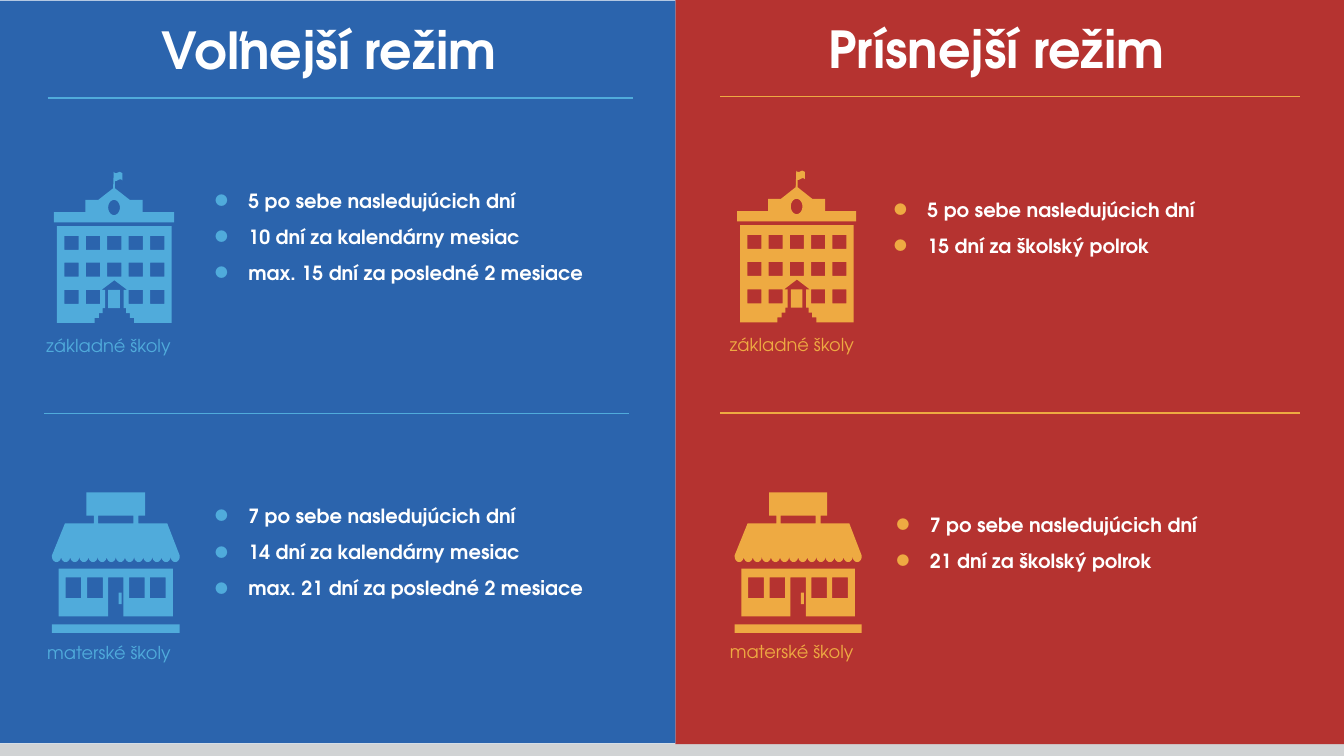
import math

from lxml import etree
from pptx import Presentation
from pptx.dml.color import RGBColor
from pptx.enum.shapes import MSO_CONNECTOR, MSO_SHAPE
from pptx.enum.text import MSO_ANCHOR, MSO_AUTO_SIZE, PP_ALIGN
from pptx.oxml.ns import qn
from pptx.util import Cm, Pt

STRAIGHT = MSO_CONNECTOR.STRAIGHT
RECTANGLE = MSO_SHAPE.RECTANGLE
TOP = MSO_ANCHOR.TOP
FIT_SHAPE = MSO_AUTO_SIZE.SHAPE_TO_FIT_TEXT
LEFT = PP_ALIGN.LEFT

FONT = "TeX Gyre Adventor"
COLORS = {
    "grey": "D1D3D4",
    "red": "B53330",
    "amber": "EEAA42",
    "blue": "2B64AD",
    "sky": "50ABDB",
    "white": "FFFFFF",
}
ICON_PRECISION = 10
ICON_SCALE = Cm(0.0254) / ICON_PRECISION


def box(left, top, width, height):
    right, bottom = left + width, top + height
    return [(left, top), (left, bottom), (right, bottom), (right, top)]


def mirrored(points, axis):
    return points + [(2 * axis - x, y) for x, y in reversed(points)]


def arc(center_x, center_y, radius_x, radius_y, start, end, steps):
    angles = [math.radians(start + (end - start) * step / steps) for step in range(steps + 1)]
    return [(center_x + radius_x * math.cos(a), center_y + radius_y * math.sin(a)) for a in angles]


def curve(start, first, second, end, steps=8):
    points = []
    for step in range(steps + 1):
        t = step / steps
        weights = ((1 - t) ** 3, 3 * t * (1 - t) ** 2, 3 * t**2 * (1 - t), t**3)
        controls = (start, first, second, end)
        points.append(tuple(sum(w * c[axis] for w, c in zip(weights, controls)) for axis in (0, 1)))
    return points


def school_contours():
    flag_bottom = curve((99, 15), (103, 16), (107, 9), (111, 14))
    flag_top = curve((107, 0), (104, 0), (100, 5), (97, 0))
    roof = mirrored([(96, 27), (72, 46), (51, 46), (51, 66), (0, 66), (0, 83)], 97.5)
    body = [(5, 89), (5, 248), (66, 248), (66, 240), (73, 240), (73, 232), (79, 232),
            (79, 224), (83, 224), (83, 194), (77, 194), (98, 178)]
    windows = [
        box(17 + 34.75 * column, top, 23, 23)
        for top in (105, 149, 194)
        for column in range(5)
        if (top, column) != (194, 2)
    ]
    return [
        flag_top + roof + flag_bottom + [(111, 2)],
        arc(97.5, 58.5, 9.5, 12.5, 0, 360, 32),
        mirrored(body, 98),
        box(88, 194, 19, 30),
    ] + windows


def kindergarten_contours():
    scallop = 14.8
    awning = [(56, 0), (56, 38), (68, 38), (68, 51), (21, 51), (0, 103)]
    for number in range(14):
        awning += arc((number + 0.5) * scallop, 105, scallop / 2, 9, 180, 0, 10)
    awning += [(207, 103), (187, 51), (140, 51), (140, 38), (151, 38), (151, 0)]
    wall = mirrored([(11, 125), (11, 203), (91, 203), (91, 139)], 103.5)
    windows = [box(left, 139, 25.5, 34) for left in (22, 57, 125, 159)]
    return [awning, box(75, 38, 57, 13), wall, box(108, 164, 5, 19), box(0, 216, 207, 14)] + windows


class RegimeSlide:
    def __init__(self, presentation):
        self.slide = presentation.slides.add_slide(presentation.slide_layouts[5])
        self.shapes = self.slide.shapes

    def color(self, name):
        return RGBColor.from_string(COLORS[name])

    def paint(self, shape, color):
        shape.shadow.inherit = False
        shape.fill.solid()
        shape.fill.fore_color.rgb = self.color(color)
        shape.line.fill.background()

    def panel(self, left, top, width, height, color):
        shape = self.shapes.add_shape(RECTANGLE, Cm(left), Cm(top), Cm(width), Cm(height))
        self.paint(shape, color)

    def rule(self, left, right, top, color):
        line = self.shapes.add_connector(STRAIGHT, Cm(left), Cm(top), Cm(right), Cm(top))
        line.line.color.rgb = self.color(color)
        line.line.width = Pt(2)
        etree.SubElement(line.element.spPr, qn("a:effectLst"))

    def icon(self, contours, left, top, width, height, color):
        scaled = [[(x * ICON_PRECISION, y * ICON_PRECISION) for x, y in c] for c in contours]
        builder = self.shapes.build_freeform(*scaled[0][0], scale=ICON_SCALE)
        builder.add_line_segments(scaled[0][1:])
        for contour in scaled[1:]:
            builder.move_to(*contour[0])
            builder.add_line_segments(contour[1:])
        shape = builder.convert_to_shape()
        shape.left, shape.top, shape.width, shape.height = Cm(left), Cm(top), Cm(width), Cm(height)
        self.paint(shape, color)

    def fill_text(self, shape, lines, size, color, bold, bullet=None):
        frame = shape.text_frame
        frame.word_wrap = bullet is not None
        frame.auto_size = FIT_SHAPE
        frame.vertical_anchor = TOP
        frame.margin_left = frame.margin_right = Cm(0.13)
        frame.margin_top = frame.margin_bottom = Cm(0.13)
        frame.text = "\n".join(lines)
        for number, paragraph in enumerate(frame.paragraphs):
            paragraph.alignment = LEFT
            if bullet:
                self.add_bullet(paragraph, bullet)
            if number:
                paragraph.space_before = Pt(15)
            paragraph.font.name = FONT
            paragraph.font.size = Pt(size)
            paragraph.font.bold = bold
            paragraph.font.color.rgb = self.color(color)

    def add_bullet(self, paragraph, color):
        properties = paragraph._p.get_or_add_pPr()
        properties.set("marL", str(Cm(1.45)))
        properties.set("indent", str(-Cm(1.42)))
        bullet_color = etree.SubElement(properties, qn("a:buClr"))
        etree.SubElement(bullet_color, qn("a:srgbClr"), val=COLORS[color])
        etree.SubElement(properties, qn("a:buFont"), typeface=FONT)
        etree.SubElement(properties, qn("a:buChar"), char="●")
        tabs = etree.SubElement(properties, qn("a:tabLst"))
        etree.SubElement(tabs, qn("a:tab"), pos=str(Cm(1.02)), algn="l")

    def text(self, left, top, width, height, lines, size, color, bold=False, bullet=None):
        shape = self.shapes.add_textbox(Cm(left), Cm(top), Cm(width), Cm(height))
        self.fill_text(shape, lines, size, color, bold, bullet)

    def title(self, left, top, width, height, text):
        shape = self.shapes.title
        shape.left, shape.top, shape.width, shape.height = Cm(left), Cm(top), Cm(width), Cm(height)
        self.fill_text(shape, [text], 60, "white", True)
        shape.element.getparent().append(shape.element)


SCHOOL = ("základné školy", school_contours())
KINDERGARTEN = ("materské školy", kindergarten_contours())
REGIMES = [
    {
        "panel": (28.07, 0, 27.84, 30.91, "red"),
        "accent": "amber",
        "rules": [(29.92, 54.03, 4.01), (29.92, 54.03, 17.15)],
        "sections": [
            (SCHOOL, (30.63, 7.09, 4.95, 6.3), (30.2, 13.74, 5.82, 1.4), (36.96, 8.08, 16.66, 4.29),
             ["5 po sebe nasledujúcich dní", "15 dní za školský polrok"]),
            (KINDERGARTEN, (30.53, 20.45, 5.28, 5.84), (30.2, 26.49, 5.79, 1.4), (37.06, 21.16, 16.66, 4.29),
             ["7 po sebe nasledujúcich dní", "21 dní za školský polrok"]),
        ],
    },
    {
        "panel": (0, 0.03, 28.07, 30.84, "blue"),
        "accent": "sky",
        "rules": [(1.98, 26.29, 4.06), (1.83, 26.14, 17.17)],
        "sections": [
            (SCHOOL, (2.24, 7.14, 5, 6.27), (1.8, 13.77, 5.87, 1.4), (8.74, 7.7, 17.78, 4.27),
             ["5 po sebe nasledujúcich dní", "10 dní za kalendárny mesiac",
              "max. 15 dní za posledné 2 mesiace"]),
            (KINDERGARTEN, (2.16, 20.45, 5.31, 5.84), (1.83, 26.52, 5.84, 1.4), (8.74, 20.8, 16.81, 4.27),
             ["7 po sebe nasledujúcich dní", "14 dní za kalendárny mesiac",
              "max. 21 dní za posledné 2 mesiace"]),
        ],
    },
]


def main():
    presentation = Presentation()
    presentation.slide_width, presentation.slide_height = Cm(55.85), Cm(31.4)
    slide = RegimeSlide(presentation)
    slide.panel(0, 30.89, 55.85, 0.53, "grey")
    for regime in REGIMES:
        accent = regime["accent"]
        slide.panel(*regime["panel"])
        for rule in regime["rules"]:
            slide.rule(*rule, accent)
        for (caption, contours), icon_box, caption_box, list_box, limits in regime["sections"]:
            slide.icon(contours, *icon_box, accent)
            slide.text(*caption_box, [caption], 21, accent)
            slide.text(*list_box, limits, 23, "white", bold=True, bullet=accent)
    slide.title(6.6, 0.66, 14.86, 2.82, "Voľnejší režim")
    slide.text(34.29, 0.61, 15.34, 2.82, ["Prísnejší režim"], 60, "white", bold=True)
    presentation.save("out.pptx")


if __name__ == "__main__":
    main()
